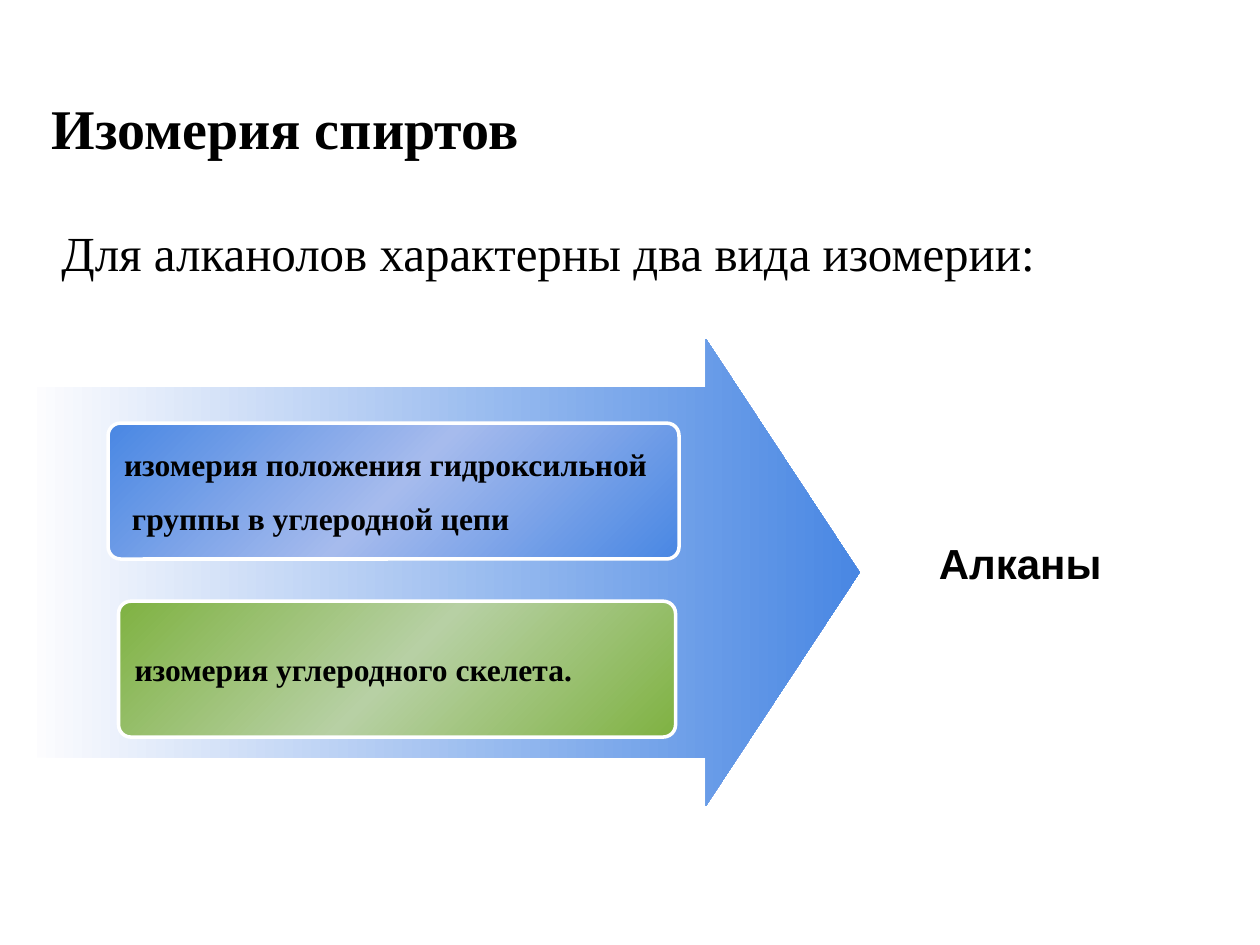
from copy import deepcopy
from dataclasses import dataclass

from pptx import Presentation
from pptx.dml.color import RGBColor
from pptx.enum.shapes import MSO_SHAPE as SHAPE
from pptx.enum.text import MSO_ANCHOR as ANCHOR, PP_ALIGN as ALIGN
from pptx.util import Cm, Pt

BLACK = RGBColor(0x00, 0x00, 0x00)
WHITE = RGBColor(0xFF, 0xFF, 0xFF)
PALE = RGBColor(0xFC, 0xFC, 0xFE)
BLUE = RGBColor(0x49, 0x87, 0xE3)
LIGHT_BLUE = RGBColor(0xA6, 0xBB, 0xED)
GREEN = RGBColor(0x7F, 0xB2, 0x42)
LIGHT_GREEN = RGBColor(0xB7, 0xD0, 0xA4)
SERIF, SANS = "Times New Roman", "Arial"
CORNER = 0.091


@dataclass
class Box:
    """Place in centimetres."""
    left: float
    top: float
    width: float
    height: float

    def lengths(self) -> list:
        return [Cm(v) for v in (self.left, self.top, self.width, self.height)]


@dataclass
class Card:
    box: Box
    text: str
    colors: tuple


CARDS = [
    Card(Box(2.18, 8.53, 11.51, 2.74),
         "изомерия положения гидроксильной\n группы в углеродной цепи",
         (BLUE, LIGHT_BLUE, BLUE)),
    Card(Box(2.39, 12.12, 11.23, 2.74),
         "изомерия углеродного скелета.",
         (GREEN, LIGHT_GREEN, GREEN)),
]


def write(sp, text: str, size: float, font=SERIF, bold=True,
          align=ALIGN.LEFT, anchor=ANCHOR.MIDDLE, wrap=True) -> None:
    tf = sp.text_frame
    tf.text = text
    tf.word_wrap = wrap
    tf.vertical_anchor = anchor
    for i, p in enumerate(tf.paragraphs):
        p.alignment = align
        if i:
            p.space_before = Pt(9.5)
        for r in p.runs:
            r.font.name, r.font.size, r.font.bold = font, Pt(size), bold
            r.font.color.rgb = BLACK


def add_shape(s, kind, box: Box, adjustments: tuple):
    sp = s.shapes.add_shape(kind, *box.lengths())
    sp.shadow.inherit = False
    for i, value in enumerate(adjustments):
        sp.adjustments[i] = value
    sp.fill.background()
    sp.line.fill.background()
    return sp


def fill_gradient(sp, colors: tuple, angle: float) -> None:
    """Spread the colours evenly; the angle runs counter-clockwise."""
    sp.fill.gradient()
    sp.fill.gradient_angle = angle
    first = sp.fill.gradient_stops[0]
    stops = sp.fill._fill._gradFill.gsLst
    for _ in colors[2:]:
        stops.insert(1, deepcopy(stops[0]))
    for i, (stop, color) in enumerate(zip(sp.fill.gradient_stops, colors)):
        stop.position = i / (len(colors) - 1)
        stop.color.rgb = color


def add_card(s, card: Card) -> None:
    sp = add_shape(s, SHAPE.ROUNDED_RECTANGLE, card.box, (CORNER,))
    fill_gradient(sp, card.colors, 315)
    sp.line.color.rgb = WHITE
    sp.line.width = Pt(2)
    write(sp, card.text, 18, wrap=False)


def main() -> None:
    prs = Presentation()
    prs.slide_width, prs.slide_height = Cm(25.4), Cm(19.05)
    s = prs.slides.add_slide(prs.slide_layouts[6])

    # Title
    title = s.shapes.add_textbox(*Box(0.79, 1.78, 13.77, 1.57).lengths())
    write(title, "Изомерия спиртов", 32)

    # Arrow with the two kinds of isomerism
    arrow = add_shape(s, SHAPE.RIGHT_ARROW, Box(0.74, 6.83, 16.59, 9.42),
                      (0.793, 0.329))
    fill_gradient(arrow, (PALE, BLUE), 0)
    for card in CARDS:
        add_card(s, card)

    # Label to the right of the arrow
    label = add_shape(s, SHAPE.ROUNDED_RECTANGLE,
                      Box(17.07, 9.53, 6.99, 3.61), (CORNER,))
    write(label, "Алканы", 24, font=SANS, align=ALIGN.CENTER)

    # Introductory sentence
    intro = s.shapes.add_textbox(*Box(0.99, 4.37, 21.23, 1.45).lengths())
    write(intro, "Для алканолов характерны два вида изомерии:", 28,
          bold=False, anchor=ANCHOR.TOP)

    prs.save("out.pptx")


if __name__ == "__main__":
    main()
